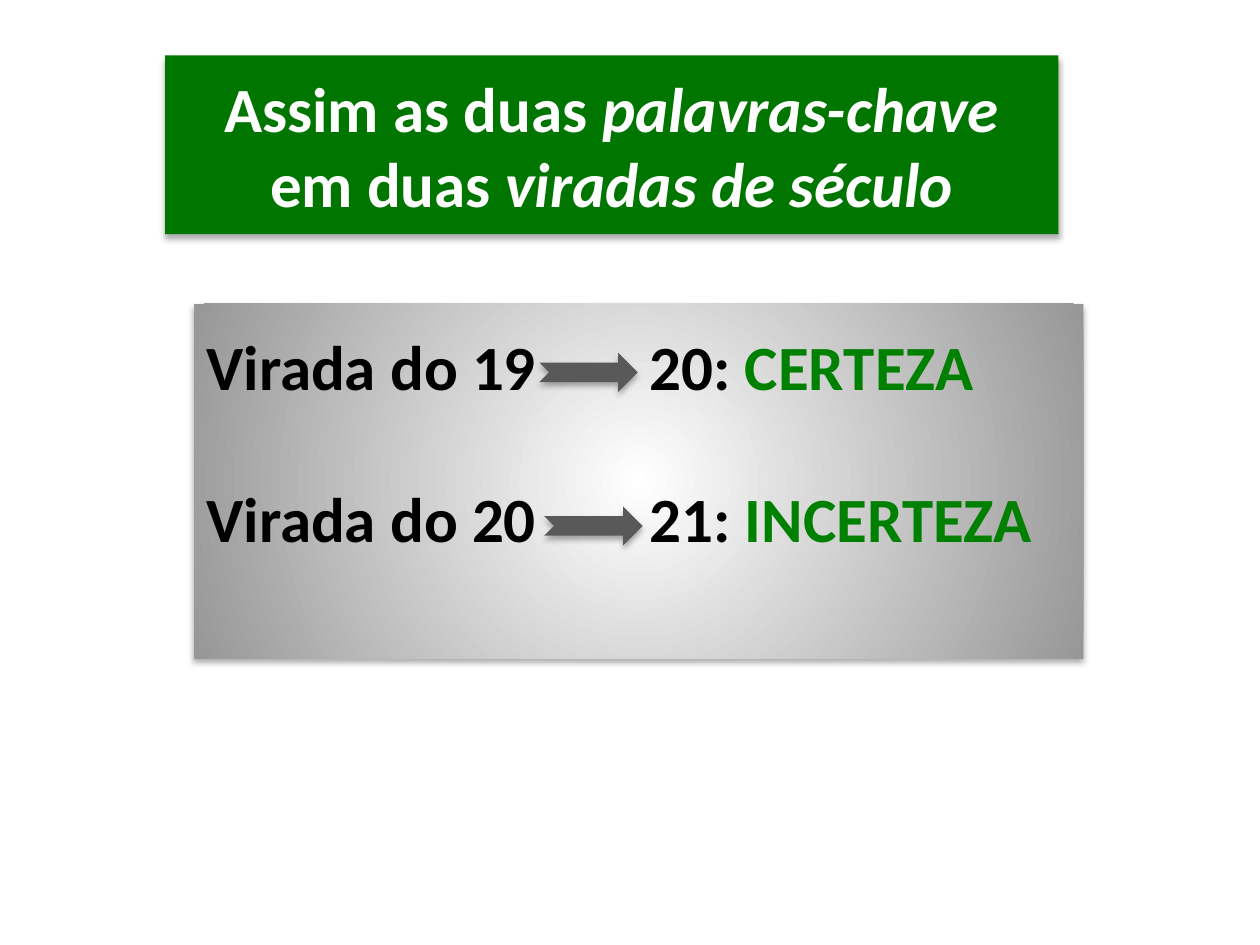
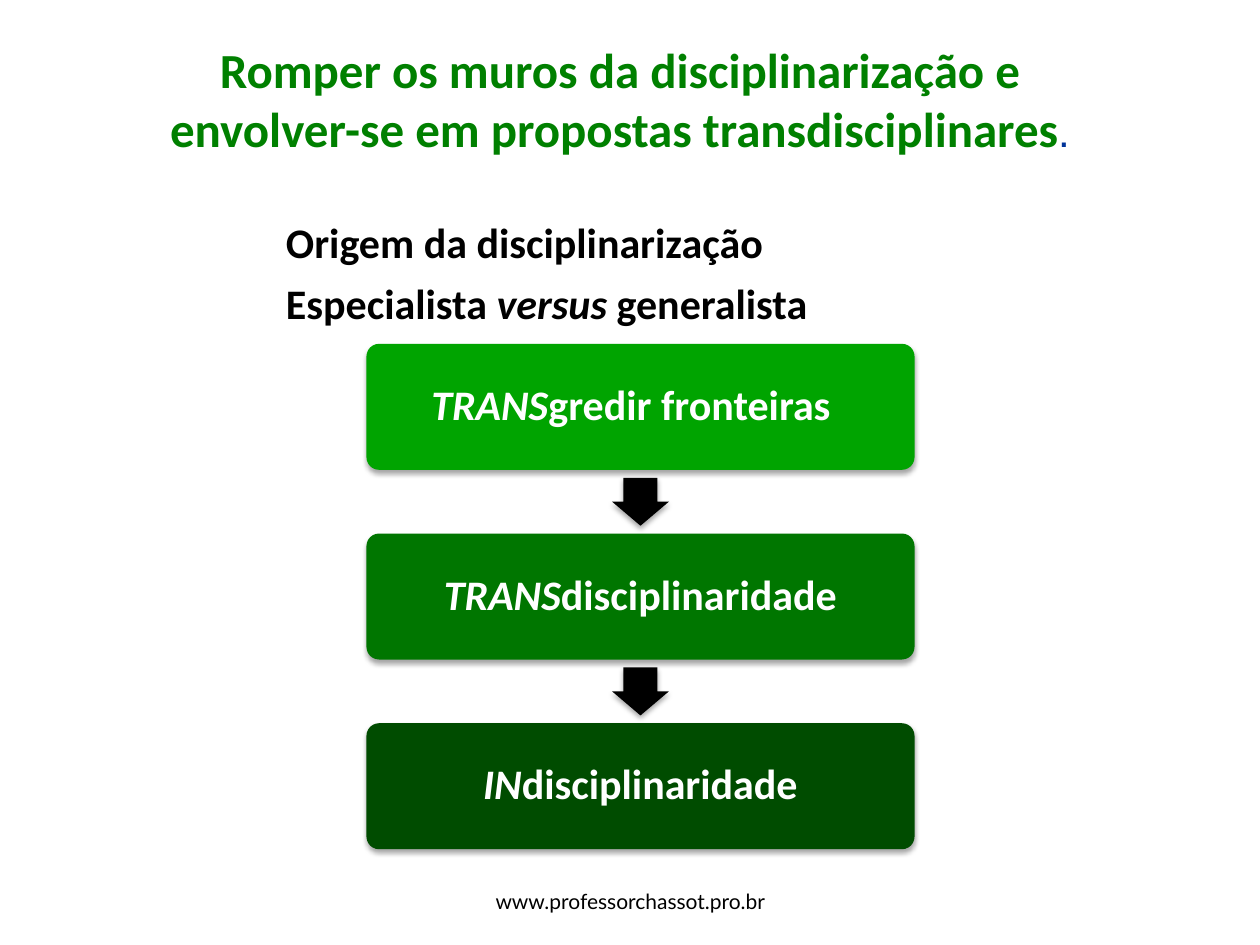
from dataclasses import dataclass

from lxml.etree import SubElement
from pptx import Presentation
from pptx.dml.color import RGBColor
from pptx.enum.shapes import MSO_SHAPE as Preset
from pptx.enum.text import MSO_ANCHOR as Anchor, PP_ALIGN as Align
from pptx.oxml.ns import qn
from pptx.util import Pt

WHITE, BLACK, GRAY, DARK_GRAY = "FFFFFF", "000000", "979797", "595959"
GREEN, BAND_GREEN, BLUE = "008000", "007600", "003399"


@dataclass(frozen=True)
class Area:
    left: float
    top: float
    width: float
    height: float


@dataclass(frozen=True)
class Span:
    text: str
    size: float
    color: str = BLACK
    bold: bool = True
    italic: bool = False
    font: str = "Calibri"


@dataclass(frozen=True)
class Shadow:
    alpha: int
    blur: float
    distance: float


@dataclass(frozen=True)
class Step:
    prefix: str
    rest: str
    fill: str
    right_inset: float = 7.2


PANEL_SHADOW = Shadow(32, 3.5, 2.2)
STEP_SHADOW = Shadow(35, 3.1, 1.8)

STEPS = [
    Step("TRANS", "gredir fronteiras", "00A400", 18),
    Step("TRANS", "disciplinaridade", BAND_GREEN),
    Step("IN", "disciplinaridade", "004C00"),
]
STEP_AREA = Area(209.4, 196.5, 313.2, 72)
STEP_PITCH = 108.4


def rgb(color: str) -> RGBColor:
    return RGBColor.from_string(color)


def lengths(area: Area) -> list:
    return [Pt(value) for value in (area.left, area.top, area.width, area.height)]


def add_shadow(shape, shadow: Shadow) -> None:
    effects = shape._element.spPr.find(qn("a:effectLst"))
    outer = SubElement(effects, qn("a:outerShdw"), blurRad=str(Pt(shadow.blur)),
                       dist=str(Pt(shadow.distance)), dir="5400000",
                       algn="ctr", rotWithShape="0")
    color = SubElement(outer, qn("a:srgbClr"), val=BLACK)
    SubElement(color, qn("a:alpha"), val=str(shadow.alpha * 1000))


def add_shape(page, preset, area: Area, fill: str, shadow: Shadow | None = None):
    shape = page.shapes.add_shape(preset, *lengths(area))
    shape.fill.solid()
    shape.fill.fore_color.rgb = rgb(fill)
    shape.line.fill.background()
    shape.shadow.inherit = False
    if shadow:
        add_shadow(shape, shadow)
    return shape


def fill_radial(shape, center: str, edge: str) -> None:
    shape.fill.gradient()
    for stop, color in zip(shape.fill.gradient_stops, (center, edge)):
        stop.color.rgb = rgb(color)
    gradient = shape._element.spPr.find(qn("a:gradFill"))
    gradient.remove(gradient.find(qn("a:lin")))
    circle = SubElement(gradient, qn("a:path"), path="circle")
    SubElement(circle, qn("a:fillToRect"), l="50000", t="50000", r="50000", b="50000")


def write(box, paragraphs: list[list[Span]], align=Align.CENTER, anchor=Anchor.MIDDLE,
          gap: float = 0, line_spacing: float = 1, tab: float = 0) -> None:
    frame = box.text_frame
    frame.word_wrap = True
    frame.vertical_anchor = anchor
    for index, spans in enumerate(paragraphs):
        para = frame.add_paragraph() if index else frame.paragraphs[0]
        para.alignment = align
        para.line_spacing = line_spacing
        if index:
            para.space_before = Pt(gap)
        if tab:
            tabs = SubElement(para._p.get_or_add_pPr(), qn("a:tabLst"))
            SubElement(tabs, qn("a:tab"), pos=str(Pt(tab)), algn="l")
        for span in spans:
            run = para.add_run()
            run.text = span.text
            run.font.name = span.font
            run.font.size = Pt(span.size)
            run.font.bold = span.bold
            run.font.italic = span.italic
            run.font.color.rgb = rgb(span.color)


def build_keywords(page) -> None:
    title = add_shape(page, Preset.RECTANGLE, Area(94.3, 31.7, 510.5, 102.2),
                      BAND_GREEN, PANEL_SHADOW)
    write(title, [[
        Span("Assim as duas ", 36, WHITE),
        Span("palavras-chave ", 36, WHITE, italic=True),
        Span("em duas ", 36, WHITE),
        Span("viradas de século", 36, WHITE, italic=True),
    ]])

    panel = add_shape(page, Preset.RECTANGLE, Area(110.9, 173.5, 508.3, 203),
                      WHITE, PANEL_SHADOW)
    fill_radial(panel, WHITE, GRAY)
    panel.text_frame.margin_top = Pt(13.6)
    turns = [("19", "20", "CERTEZA"), ("20", "21", "INCERTEZA")]
    write(panel, [
        [Span(f"Virada do {start}\t{end}: ", 36), Span(keyword, 36, GREEN)]
        for start, end, keyword in turns
    ], Align.LEFT, Anchor.TOP, gap=43.9, tab=253.2)

    for left, top in ((308.2, 201.6), (311, 289.4)):
        add_shape(page, Preset.NOTCHED_RIGHT_ARROW, Area(left, top, 56.2, 22.3),
                  DARK_GRAY, PANEL_SHADOW)


def build_steps(page) -> None:
    title = add_shape(page, Preset.RECTANGLE, Area(61.9, 20.2, 584.6, 72), WHITE)
    write(title, [[
        Span("Romper os muros da disciplinarização e envolver-se em propostas "
             "transdisciplinares", 28, GREEN),
        Span(".", 24, BLUE, bold=False, font="Arial"),
    ]])

    topics = add_shape(page, Preset.RECTANGLE, Area(118, 100, 528.5, 343.5), WHITE)
    topics.text_frame.margin_left = Pt(45.4)
    topics.text_frame.margin_top = Pt(23.6)
    write(topics, [
        [Span("Origem da disciplinarização", 24)],
        [Span("Especialista", 24), Span(" versus ", 24, italic=True),
         Span("generalista", 24)],
    ], Align.LEFT, Anchor.TOP, gap=6)

    arrow_width, arrow_height = 32.4, 27.4
    arrow_left = STEP_AREA.left + (STEP_AREA.width - arrow_width) / 2
    for index, step in enumerate(STEPS):
        top = STEP_AREA.top + index * STEP_PITCH
        area = Area(STEP_AREA.left, top, STEP_AREA.width, STEP_AREA.height)
        box = add_shape(page, Preset.ROUNDED_RECTANGLE, area, step.fill, STEP_SHADOW)
        box.adjustments[0] = 0.1
        box.text_frame.margin_right = Pt(step.right_inset)
        write(box, [[Span(step.prefix, 24, WHITE, italic=True),
                     Span(step.rest, 24, WHITE)]], line_spacing=0.9)
        if index:
            arrow_top = top - (STEP_PITCH - STEP_AREA.height + arrow_height) / 2
            arrow = add_shape(page, Preset.DOWN_ARROW,
                              Area(arrow_left, arrow_top, arrow_width, arrow_height),
                              BLACK, STEP_SHADOW)
            arrow.adjustments[0] = 0.6
            arrow.adjustments[1] = 0.5

    footer = page.shapes.add_textbox(*lengths(Area(246.2, 500.4, 228.2, 28.8)))
    write(footer, [[Span("www.professorchassot.pro.br", 12, bold=False, font="Lato")]])


def main() -> None:
    deck = Presentation()
    deck.slide_width, deck.slide_height = Pt(720), Pt(540)
    for build in (build_keywords, build_steps):
        build(deck.slides.add_slide(deck.slide_layouts[6]))
    deck.save("out.pptx")


if __name__ == "__main__":
    main()
